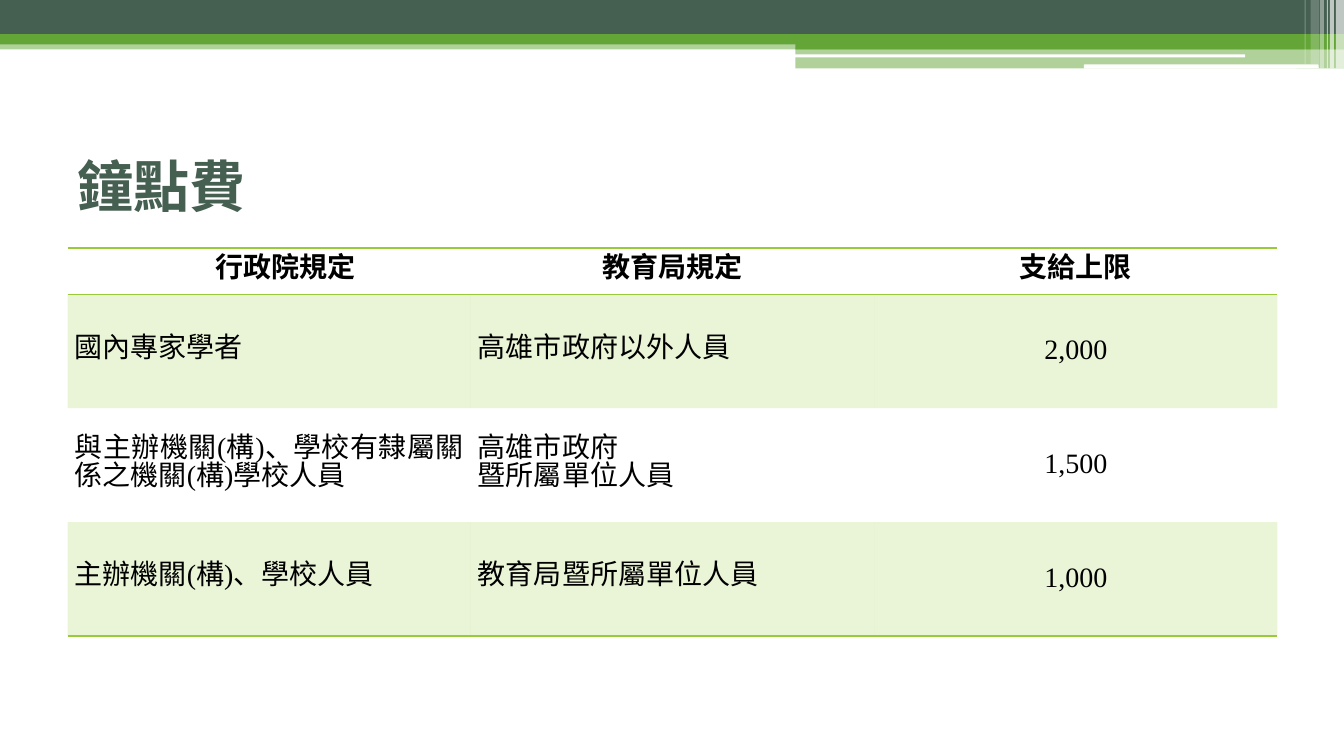
from lxml import etree
from pptx import Presentation
from pptx.dml.color import RGBColor
from pptx.enum import shapes, text
from pptx.oxml import ns
from pptx.util import Inches, Pt

DARK, GREEN, LIME, WHITE, BLACK = "455F51", "63A537", "99CB38", "FFFFFF", "000000"
LATIN, CJK = "Times New Roman", "Noto Sans CJK SC"
PLAIN_TABLE = "{2D5ABB26-0587-4C30-8999-92F81FD0307C}"
ALIGN = {"left": text.PP_ALIGN.LEFT, "center": text.PP_ALIGN.CENTER,
         "justify": text.PP_ALIGN.JUSTIFY}

# left, top, width, height, colour, opacity in percent
BANDS = [
    (0, 0.4, 13.33, 0.09, GREEN, 50),
    (0, 0, 13.33, 0.34, DARK, 100),
    (0, 0.34, 13.33, 0.1, GREEN, 100),
    (7.89, 0.39, 5.44, 0.1, GREEN, 100),
    (7.89, 0.48, 5.44, 0.2, GREEN, 50),
]
SLITS = [(7.88, 0.54, 4.47, 0.03), (10.75, 0.64, 2.33, 0.04)]
# left, width, height, opacity in percent
STRIPES = [
    (13.25, 0.08, 0.68, 65), (13.19, 0.04, 0.68, 65), (13.16, 0.01, 0.68, 60),
    (13.09, 0.04, 0.68, 40), (13, 0.08, 0.64, 20), (12.94, 0.01, 0.64, 30),
]
FEES = [
    ("行政院規定", "教育局規定", "支給上限"),
    ("國內專家學者", "高雄市政府以外人員", "2,000"),
    ("與主辦機關(構)、學校有隸屬關係之機關(構)學校人員",
     "高雄市政府\n暨所屬單位人員", "1,500"),
    ("主辦機關(構)、學校人員", "教育局暨所屬單位人員", "1,000"),
]


def rgb(colour):
    return RGBColor.from_string(colour)


def paint(fill, holder, colour, opacity=100):
    """Fill solidly; holder is the XML element that contains the fill."""
    fill.solid()
    fill.fore_color.rgb = rgb(colour)
    if opacity < 100:
        clr = holder.find(ns.qn("a:solidFill")).find(ns.qn("a:srgbClr"))
        etree.SubElement(clr, ns.qn("a:alpha")).set("val", str(opacity * 1000))


def write(frame, words, size=20, colour=BLACK, bold=False, align="left",
          font=LATIN, spacing=None):
    frame.text = words
    for paragraph in frame.paragraphs:
        paragraph.alignment = ALIGN[align]
        if spacing:
            paragraph.line_spacing = Pt(spacing)
        for run in paragraph.runs:
            run.font.size, run.font.bold, run.font.name = Pt(size), bold, font
            run.font.color.rgb = rgb(colour)
            east_asian = etree.SubElement(run.font._element, ns.qn("a:ea"))
            east_asian.set("typeface", CJK)


def rule(cell, *sides):
    """Draw lime lines on the given cell sides, T before B."""
    props = cell._tc.get_or_add_tcPr()
    for place, side in enumerate(sides):
        line = etree.Element(ns.qn("a:ln" + side), w=str(Pt(1)))
        solid = etree.SubElement(line, ns.qn("a:solidFill"))
        etree.SubElement(solid, ns.qn("a:srgbClr")).set("val", LIME)
        props.insert(place, line)


class FeeSlide:
    def __init__(self, deck):
        self.slide = deck.slides.add_slide(deck.slide_layouts[5])

    def bar(self, left, top, width, height, colour, opacity=100,
            kind=shapes.MSO_SHAPE.RECTANGLE):
        bar = self.slide.shapes.add_shape(
            kind, Inches(left), Inches(top), Inches(width), Inches(height))
        bar.shadow.inherit = False
        bar.line.fill.background()
        paint(bar.fill, bar._element.spPr, colour, opacity)

    def title(self, words):
        title = self.slide.shapes.title
        title.left, title.top = Inches(0.67), Inches(1.25)
        title.width, title.height = Inches(12), Inches(1.17)
        title.text_frame.vertical_anchor = text.MSO_ANCHOR.MIDDLE
        write(title.text_frame, words, size=40, colour=DARK, bold=True, font=CJK)

    def table(self, rows):
        table = self.slide.shapes.add_table(
            len(rows), len(rows[0]), Inches(0.67), Inches(2.46),
            Inches(12), Inches(3.86)).table
        table._tbl.tblPr.find(ns.qn("a:tableStyleId")).text = PLAIN_TABLE
        for r, row in enumerate(rows):
            table.rows[r].height = Inches(1.13 if r else 0.46)
            for c, words in enumerate(row):
                self.cell(table.cell(r, c), words, r, c, r == len(rows) - 1)
        heading = table.cell(0, 0).text_frame.paragraphs[0]
        indent = heading._p.get_or_add_pPr()
        indent.set("marL", str(Inches(0.33)))
        indent.set("indent", "0")

    def cell(self, cell, words, r, c, last):
        cell.margin_left = cell.margin_right = Inches(0.07)
        cell.margin_top = cell.margin_bottom = 0
        cell.vertical_anchor = text.MSO_ANCHOR.MIDDLE
        write(cell.text_frame, words, bold=r == 0, spacing=20,
              align="center" if r == 0 or c == 2 else "justify")
        if r % 2:
            paint(cell.fill, cell._tc.tcPr, LIME, 20)
        else:
            cell.fill.background()
        if r == 0:
            rule(cell, "T", "B")
        elif last:
            rule(cell, "B")


def main():
    deck = Presentation()
    deck.slide_width, deck.slide_height = Inches(13.33), Inches(7.5)
    page = FeeSlide(deck)
    for band in BANDS:
        page.bar(*band)
    for slit in SLITS:
        page.bar(*slit, WHITE, kind=shapes.MSO_SHAPE.ROUNDED_RECTANGLE)
    for left, width, height, opacity in STRIPES:
        page.bar(left, 0, width, height, WHITE, opacity)
    page.title("鐘點費")
    page.table(FEES)
    deck.save("out.pptx")


if __name__ == "__main__":
    main()
